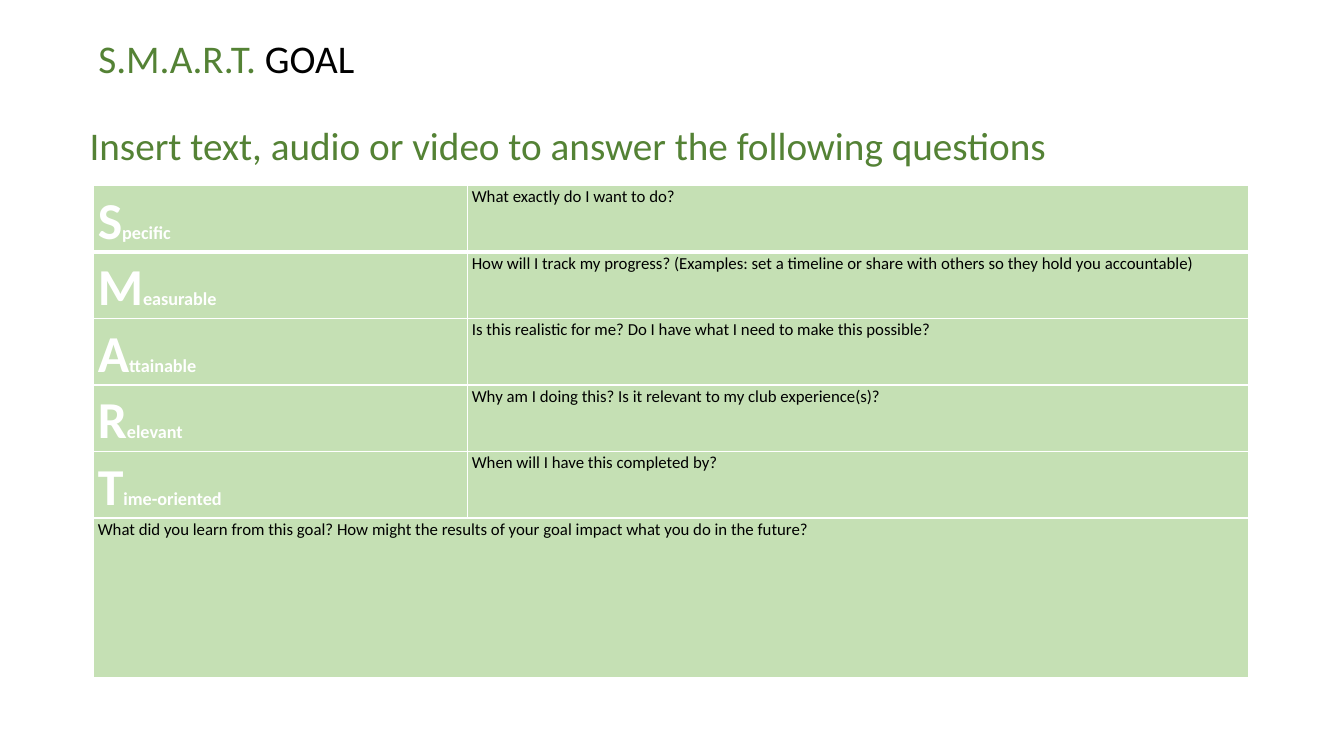
from dataclasses import dataclass

from lxml.etree import SubElement
from pptx import Presentation
from pptx.dml.color import RGBColor
from pptx.enum.text import PP_ALIGN
from pptx.oxml.ns import qn
from pptx.util import Inches, Pt


@dataclass(frozen=True)
class Theme:
    """Colours, font and type sizes of the slide."""
    font: str = "Calibri"
    green: str = "548235"
    pale: str = "C5E0B4"
    black: str = "000000"
    white: str = "FFFFFF"
    head: int = 28
    letter: int = 37
    word: int = 13
    body: int = 12


THEME = Theme()
GOALS = [
    ("Specific", "What exactly do I want to do?"),
    ("Measurable", "How will I track my progress? (Examples: set a timeline or "
                   "share with others so they hold you accountable)"),
    ("Attainable", "Is this realistic for me? Do I have what I need to make this possible?"),
    ("Relevant", "Why am I doing this? Is it relevant to my club experience(s)?"),
    ("Time-oriented", "When will I have this completed by?"),
]
REVIEW = ("What did you learn from this goal? How might the results of your goal "
          "impact what you do in the future?")


def write(para, text, size=THEME.body, color=THEME.black, bold=False):
    """Add one formatted run to a paragraph."""
    run = para.add_run()
    run.text = text
    run.font.name = THEME.font
    run.font.size = Pt(size)
    run.font.bold = bold
    run.font.color.rgb = RGBColor.from_string(color)


def add_text(slide, box, parts, wrap=True, align=PP_ALIGN.LEFT, space=1.0, after=0):
    """Place a heading made of coloured parts in a box."""
    frame = slide.shapes.add_textbox(*map(Inches, box)).text_frame
    frame.word_wrap = wrap
    para = frame.paragraphs[0]
    para.alignment = align
    para.line_spacing = space
    para.space_after = Pt(after)
    for text, color in parts:
        write(para, text, size=THEME.head, color=color)


def style_cell(cell, top=1, base=1):
    """Give a cell its margins, white borders and fill, and return its paragraph."""
    cell.margin_left = cell.margin_right = Inches(0.04)
    cell.margin_top = cell.margin_bottom = 0
    props = cell._tc.get_or_add_tcPr()
    for side, width in zip("LRTB", (1, 1, top, base)):
        line = SubElement(props, qn(f"a:ln{side}"), w=str(Pt(width)))
        fill = SubElement(line, qn("a:solidFill"))
        SubElement(fill, qn("a:srgbClr"), val=THEME.white)
    cell.fill.solid()
    cell.fill.fore_color.rgb = RGBColor.from_string(THEME.pale)
    para = cell.text_frame.paragraphs[0]
    para.line_spacing = 1.07
    return para


def add_goals(slide, box, label=3.71, review=1.58):
    """Draw the goal table with a merged review row at its foot."""
    count = len(GOALS)
    table = slide.shapes.add_table(count + 1, 2, *map(Inches, box)).table
    table.first_row = table.horz_banding = False
    for col, width in zip(table.columns, (label, box[2] - label)):
        col.width = Inches(width)
    for row in table.rows:
        row.height = Inches((box[3] - review) / count)
    table.rows[count].height = Inches(review)
    for index, (word, query) in enumerate(GOALS):
        edge = {"top": 3 if index == 1 else 1, "base": 3 if index == 0 else 1}
        para = style_cell(table.cell(index, 0), **edge)
        write(para, word[0], size=THEME.letter, color=THEME.white, bold=True)
        write(para, word[1:], size=THEME.word, color=THEME.white, bold=True)
        write(style_cell(table.cell(index, 1), **edge), query)
    foot = table.cell(count, 0)
    foot.merge(table.cell(count, 1))
    style_cell(table.cell(count, 1))
    write(style_cell(foot), REVIEW)


def main():
    """Build and save the slide."""
    deck = Presentation()
    deck.slide_width, deck.slide_height = Inches(13.33), Inches(7.5)
    slide = deck.slides.add_slide(deck.slide_layouts[6])
    add_text(slide, (0.36, 0.26, 3.77, 0.58),
             [("S.M.A.R.T. ", THEME.green), ("GOAL", THEME.black)],
             align=PP_ALIGN.CENTER, space=1.07, after=8)
    add_text(slide, (0.79, 1.15, 9.79, 0.57),
             [("Insert text, audio or video to answer the following questions", THEME.green)],
             wrap=False)
    add_goals(slide, (0.93, 1.84, 11.45, 4.78))
    deck.save("out.pptx")


if __name__ == "__main__":
    main()
